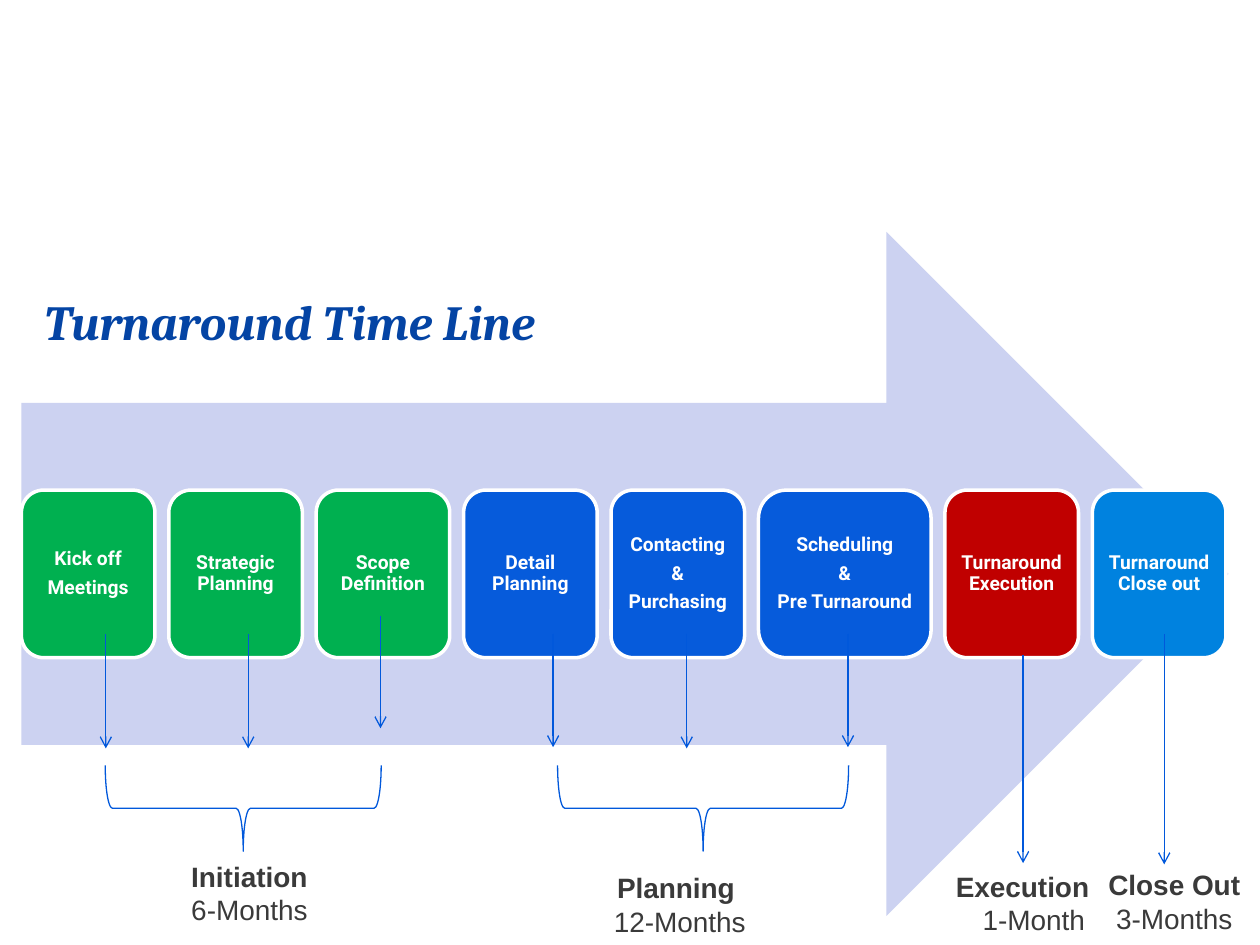
from lxml import etree
from pptx import Presentation
from pptx.dml.color import RGBColor
from pptx.enum.shapes import MSO_CONNECTOR, MSO_SHAPE
from pptx.enum.text import MSO_ANCHOR, MSO_AUTO_SIZE, PP_ALIGN
from pptx.oxml.ns import qn
from pptx.util import Inches, Pt

ARROW, ROUND, BRACE = MSO_SHAPE.RIGHT_ARROW, MSO_SHAPE.ROUNDED_RECTANGLE, MSO_SHAPE.RIGHT_BRACE
STRAIGHT = MSO_CONNECTOR.STRAIGHT
TOP, MIDDLE = MSO_ANCHOR.TOP, MSO_ANCHOR.MIDDLE
LEFT, CENTER = PP_ALIGN.LEFT, PP_ALIGN.CENTER
FIXED = MSO_AUTO_SIZE.NONE

WHITE = RGBColor(0xFF, 0xFF, 0xFF)
PALE = RGBColor(0xCC, 0xD2, 0xF1)
GREEN = RGBColor(0x00, 0xB0, 0x50)
BLUE = RGBColor(0x06, 0x5B, 0xDB)
RED = RGBColor(0xC0, 0x00, 0x00)
SKY = RGBColor(0x00, 0x82, 0xDF)
INK = RGBColor(0x01, 0x58, 0xDB)
GRAY = RGBColor(0x3A, 0x3A, 0x3A)
NAVY = RGBColor(0x04, 0x44, 0xA4)

EDGE, ROW, GAP = 0.17, 3.89, 0.11
WIDE, TALL = 1.06, 1.33

HEAD = {"name": "Cambria", "size": Pt(28), "bold": True, "italic": True}
STEP = {"name": "Roboto", "size": Pt(11), "bold": True}
NOTE = {"name": "Arial", "size": Pt(16), "bold": True}
FLOW = {"alignment": CENTER, "line_spacing": 0.9, "space_after": Pt(4.5)}


def write(frame, lines, font, color, flow):
    frame.text = "\n".join(lines)
    frame.word_wrap = True
    for para in frame.paragraphs:
        for key, value in flow.items():
            setattr(para, key, value)
        for key, value in font.items():
            setattr(para.font, key, value)
        para.font.color.rgb = color


def draw(kind, left, top, wide, tall):
    shape = slide.shapes.add_shape(kind, Inches(left), Inches(top), Inches(wide), Inches(tall))
    shape.shadow.inherit = False
    return shape


deck = Presentation()
deck.slide_width, deck.slide_height = Inches(10), Inches(7.5)
slide = deck.slides.add_slide(deck.slide_layouts[5])

title = slide.shapes.title
place = {"left": 0.25, "top": 2.26, "width": 5.5, "height": 0.57}
for key, value in place.items():
    setattr(title, key, Inches(value))
write(title.text_frame, ["Turnaround Time Line"], HEAD, NAVY, {"alignment": LEFT})
title.text_frame.auto_size = FIXED
title.text_frame.vertical_anchor = TOP

arrow = draw(ARROW, EDGE, 1.84, 9.58, 5.43)
arrow.fill.solid()
arrow.fill.fore_color.rgb = PALE
arrow.line.fill.background()

steps = [
    (["Kick off", "Meetings"], GREEN, WIDE),
    (["Strategic Planning"], GREEN, WIDE),
    (["Scope Definition"], GREEN, WIDE),
    (["Detail Planning"], BLUE, WIDE),
    (["Contacting", "&", "Purchasing"], BLUE, WIDE),
    (["Scheduling", "&", "Pre Turnaround"], BLUE, 1.37),
    (["Turnaround Execution"], RED, WIDE),
    (["Turnaround Close out"], SKY, WIDE),
]
left = EDGE
for lines, color, wide in steps:
    card = draw(ROUND, left, ROW, wide, TALL)
    card.fill.solid()
    card.fill.fore_color.rgb = color
    card.line.color.rgb = WHITE
    card.line.width = Pt(2)
    frame = card.text_frame
    for side in ("left", "right", "top", "bottom"):
        setattr(frame, "margin_" + side, Inches(0.05))
    frame.vertical_anchor = MIDDLE
    write(frame, lines, STEP, WHITE, FLOW)
    left += wide + GAP

drops = [
    (0.84, 5.03, 5.94), (1.97, 5.03, 5.94), (3.02, 4.89, 5.78),
    (4.39, 5.03, 5.93), (5.45, 5.03, 5.94), (6.73, 5.03, 5.93),
    (8.12, 5.2, 6.85), (9.24, 5.03, 6.86),
]
for x, top, end in drops:
    drop = slide.shapes.add_connector(STRAIGHT, Inches(x), Inches(top), Inches(x), Inches(end))
    drop.line.color.rgb = INK
    drop.line.width = Pt(0.75)
    etree.SubElement(drop.line._get_or_add_ln(), qn("a:tailEnd"), type="arrow")
    etree.SubElement(drop._element.spPr, qn("a:effectLst"))

for left, top, span in [(1.59, 5.32, 2.19), (5.24, 5.26, 2.31)]:
    brace = draw(BRACE, left, top, 0.68, span)
    brace.rotation = 90
    brace.fill.background()
    brace.line.color.rgb = INK
    brace.line.width = Pt(0.75)

notes = [
    ("Initiation", "6-Months", 1, 6.77, 1.96, 0),
    ("Planning", "12-Months", 4.16, 6.86, 2.41, 0.06),
    ("Execution", "1-Month", 7.44, 6.85, 1.35, 0.18),
    ("Close Out", "3-Months", 8.64, 6.84, 1.36, 0),
]
for phase, time, left, top, wide, dent in notes:
    box = slide.shapes.add_textbox(Inches(left), Inches(top), Inches(wide), Inches(0.64))
    write(box.text_frame, [phase, time], NOTE, GRAY, {"alignment": CENTER})
    last = box.text_frame.paragraphs[1]
    last.font.bold = False
    last._p.get_or_add_pPr().set("marL", str(Inches(dent)))

deck.save("out.pptx")
